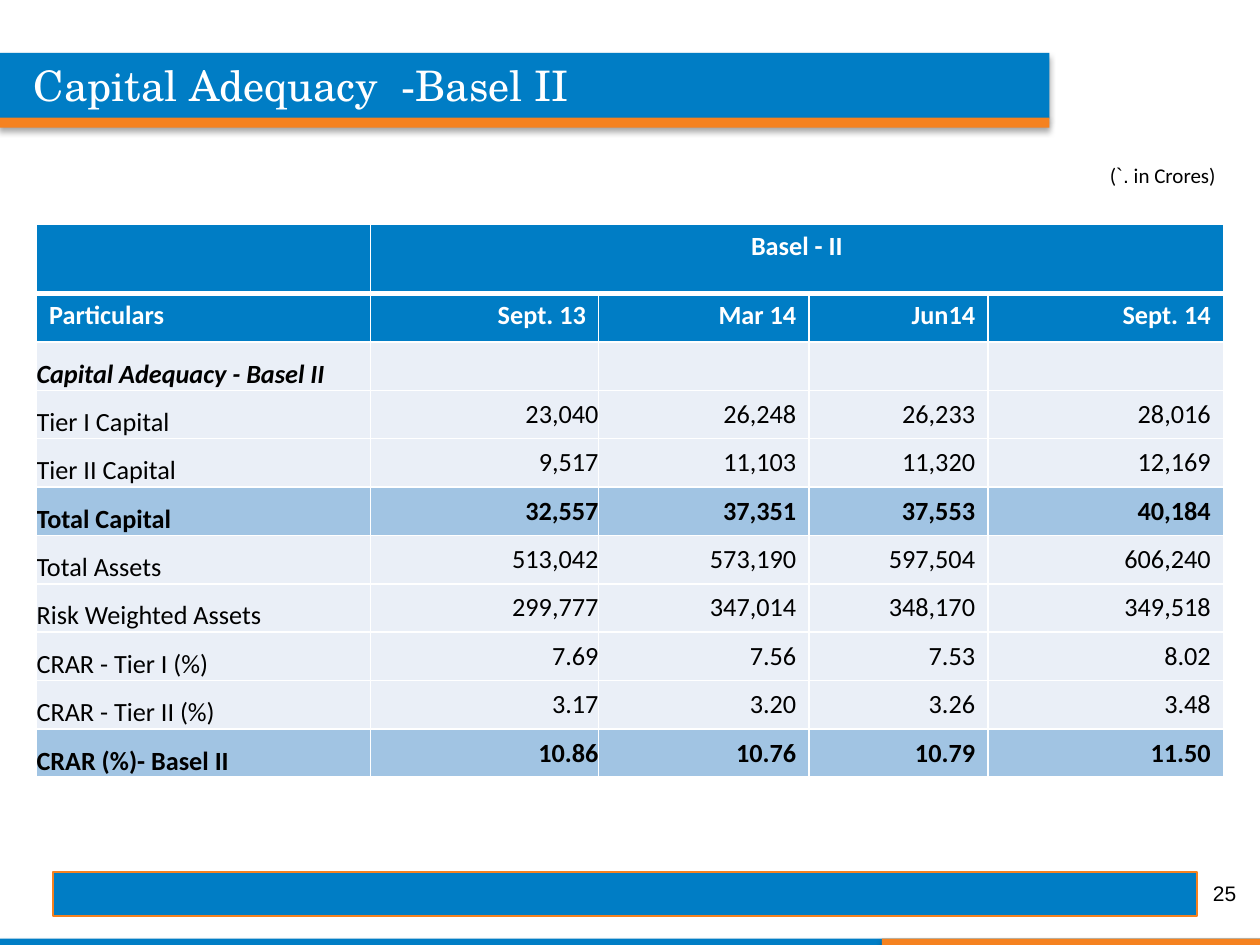
import dataclasses
import lxml.etree
import pptx
import pptx.dml.color
import pptx.enum.shapes
import pptx.enum.text
import pptx.oxml
import pptx.oxml.ns
import pptx.util

ALIGN = pptx.enum.text.PP_ALIGN
ANCHOR = pptx.enum.text.MSO_ANCHOR


@dataclasses.dataclass(frozen=True)
class Theme:
    blue: str = "007DC5"
    orange: str = "F58220"
    pale: str = "EAEFF7"
    total: str = "A1C4E3"
    white: str = "FFFFFF"
    black: str = "000000"
    title_font: str = "TeX Gyre Schola"
    body_font: str = "Calibri"
    plain_font: str = "Arial"
    title_size: int = 24
    table_size: int = 15
    small_size: int = 12


def rgb(value):
    return pptx.dml.color.RGBColor.from_string(value)


def apply(target, values):
    for name, value in values.items():
        setattr(target, name, value)


class SlideBuilder:
    COLUMNS, ROWS = 100, 75

    def __init__(self, prs, theme):
        self.theme = theme
        self.s = prs.slides.add_slide(prs.slide_layouts[6])
        self.cell_w = prs.slide_width / self.COLUMNS
        self.cell_h = prs.slide_height / self.ROWS

    def x(self, columns):
        return pptx.util.Emu(round(columns * self.cell_w))

    def y(self, rows):
        return pptx.util.Emu(round(rows * self.cell_h))

    def box(self, left, top, width, height):
        return self.x(left), self.y(top), self.x(width), self.y(height)

    def bar(self, shapes, place, color, line=None):
        sp = shapes.add_shape(pptx.enum.shapes.MSO_SHAPE.RECTANGLE, *self.box(*place))
        sp.shadow.inherit = False
        sp.fill.solid()
        sp.fill.fore_color.rgb = rgb(color)
        if line:
            sp.line.color.rgb = rgb(line)
            sp.line.width = pptx.util.Pt(0.75)
        else:
            sp.line.fill.background()
        return sp

    def shadow_bars(self, *bars):
        shapes = self.s.shapes.add_group_shape().shapes
        for place, color in bars:
            sp = self.bar(shapes, place, color)
            effects = sp._element.spPr.find(pptx.oxml.ns.qn("a:effectLst"))
            effects.append(pptx.oxml.parse_xml(
                f'<a:outerShdw {pptx.oxml.ns.nsdecls("a")} blurRad="44450" dist="27940" '
                f'dir="5400000" rotWithShape="0"><a:srgbClr val="{self.theme.black}">'
                '<a:alpha val="32000"/></a:srgbClr></a:outerShdw>'))

    def add_runs(self, p, runs, size, color, align=ALIGN.LEFT, bold=False, italic=False):
        p.alignment = align
        for text, font in runs:
            r = p.add_run()
            r.text = text
            apply(r.font, {"name": font, "size": pptx.util.Pt(size),
                           "bold": bold, "italic": italic})
            r.font.color.rgb = rgb(color)

    def text(self, place, runs, size, color, align=ALIGN.LEFT, anchor=ANCHOR.TOP):
        tf = self.s.shapes.add_textbox(*self.box(*place)).text_frame
        apply(tf, {"word_wrap": True, "vertical_anchor": anchor})
        self.add_runs(tf.paragraphs[0], runs, size, color, align)

    def borders(self, cell, heavy_side=None):
        tc_pr = cell._tc.get_or_add_tcPr()
        for side in "LRTB":
            ln = lxml.etree.SubElement(tc_pr, pptx.oxml.ns.qn(f"a:ln{side}"))
            ln.set("w", str(pptx.util.Pt(3 if side == heavy_side else 1)))
            fill = lxml.etree.SubElement(ln, pptx.oxml.ns.qn("a:solidFill"))
            color = lxml.etree.SubElement(fill, pptx.oxml.ns.qn("a:srgbClr"))
            color.set("val", self.theme.white)

    def cell_format(self, row, col, text):
        tight = row > 1 and (col < 2 or not text)
        side, edge = (0, 0) if tight else (0.1, 0.05)
        if row < 2:
            anchor = ANCHOR.TOP
        else:
            anchor = ANCHOR.MIDDLE if col else ANCHOR.BOTTOM
        return {"margin_left": pptx.util.Inches(side), "margin_right": pptx.util.Inches(side),
                "margin_top": pptx.util.Inches(edge), "margin_bottom": pptx.util.Inches(edge),
                "vertical_anchor": anchor}

    def table(self, place, widths, heights, data, section_row, total_rows):
        t = self.theme
        shape = self.s.shapes.add_table(len(heights), len(widths), *self.box(*place))
        table = shape.table
        apply(table, {"first_row": False, "horz_banding": False})
        for column, width in zip(table.columns, widths):
            column.width = self.x(width)
        for row, height in zip(table.rows, heights):
            row.height = self.y(height)
        table.cell(0, 1).merge(table.cell(0, len(widths) - 1))
        for i, values in enumerate(data):
            header, total = i < 2, i in total_rows
            fill = t.blue if header else t.total if total else t.pale
            for j, value in enumerate(values):
                cell = table.cell(i, j)
                self.borders(cell, {0: "B", 1: "T"}.get(i))
                cell.fill.solid()
                cell.fill.fore_color.rgb = rgb(fill)
                apply(cell, self.cell_format(i, j, value))
                if value:
                    align = ALIGN.CENTER if i == 0 else ALIGN.RIGHT if j else ALIGN.LEFT
                    self.add_runs(cell.text_frame.paragraphs[0], [(value, t.body_font)],
                                  t.table_size, t.white if header else t.black, align,
                                  header or total or i == section_row, i == section_row)


ADEQUACY = [
    ["", "Basel - II", "", "", ""],
    ["Particulars", "Sept. 13", "Mar 14", "Jun14", "Sept. 14"],
    ["Capital Adequacy - Basel II", "", "", "", ""],
    ["Tier I Capital", "23,040", "26,248", "26,233", "28,016"],
    ["Tier II Capital", "9,517", "11,103", "11,320", "12,169"],
    ["Total Capital", "32,557", "37,351", "37,553", "40,184"],
    ["Total Assets", "513,042", "573,190", "597,504", "606,240"],
    ["Risk Weighted Assets", "299,777", "347,014", "348,170", "349,518"],
    ["CRAR - Tier I (%)", "7.69", "7.56", "7.53", "8.02"],
    ["CRAR - Tier II (%)", "3.17", "3.20", "3.26", "3.48"],
    ["CRAR (%)- Basel II", "10.86", "10.76", "10.79", "11.50"],
]


def main():
    prs = pptx.Presentation()
    prs.slide_width = pptx.util.Inches(10)
    prs.slide_height = pptx.util.Inches(7.5)
    t = Theme()
    b = SlideBuilder(prs, t)
    b.shadow_bars(((0, 74.5, 100, 0.5), t.blue), ((70, 74.5, 30, 0.5), t.orange))
    b.shadow_bars(((0, 4.2, 83.3, 5.2), t.blue), ((0, 9.33, 83.3, 0.8), t.orange))
    b.bar(b.s.shapes, (4.2, 69.2, 90.8, 3.5), t.blue, t.orange)
    b.table((2.9, 17.8, 94.2, 43.9), [26.5, 18.1, 16.7, 14.2, 18.7],
            [5.5] + [3.84] * 10, ADEQUACY, section_row=2, total_rows=(5, 10))
    b.text((1.7, 4.2, 67.5, 5), [("Capital Adequacy  -Basel II", t.title_font)],
           t.title_size, t.white)
    b.text((87.1, 12.4, 12.9, 3),
           [("(", t.body_font), ("`.", t.plain_font), (" in Crores)", t.body_font)],
           t.small_size, t.black)
    b.text((75.8, 68.9, 23.3, 4), [("25", t.plain_font)], t.small_size, t.black,
           ALIGN.RIGHT, ANCHOR.MIDDLE)
    prs.save("out.pptx")


if __name__ == "__main__":
    main()
